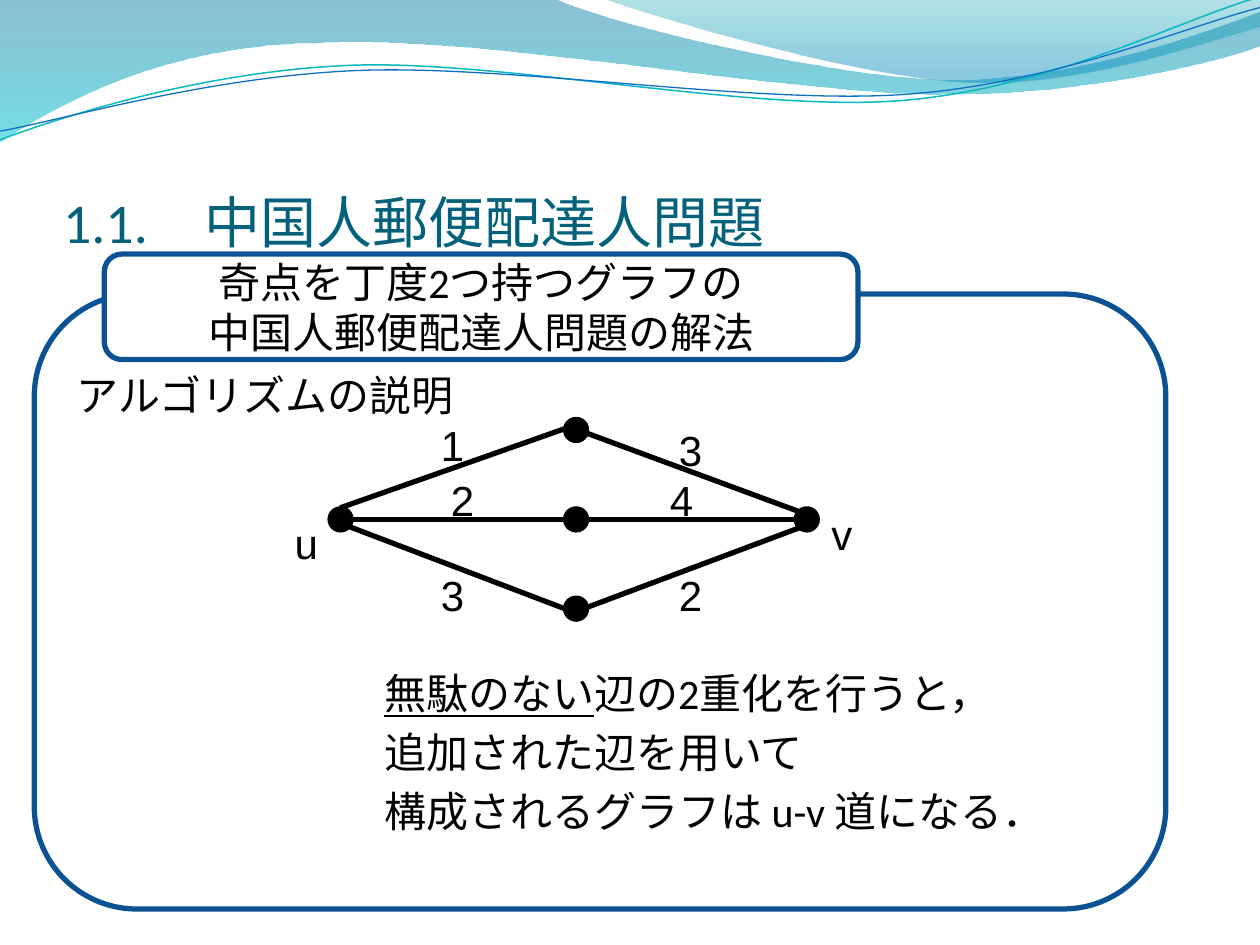
from pptx import Presentation
from pptx.dml.color import RGBColor
from pptx.enum import shapes, text
from pptx.oxml import ns
from pptx.util import Pt
from lxml import etree

BLACK = RGBColor(0x00, 0x00, 0x00)
WHITE = RGBColor(0xFF, 0xFF, 0xFF)
TITLE_TEAL = RGBColor(0x04, 0x61, 0x7B)
FRAME_BLUE = RGBColor(0x0B, 0x52, 0x92)
WAVE_BLUE = RGBColor(0x00, 0x74, 0xA1)
WAVE_CYAN = RGBColor(0x00, 0xC6, 0xCF)
CREST_TEAL = RGBColor(0x00, 0xA1, 0xA9)
CREST_BLUE = RGBColor(0x00, 0x8B, 0xBF)
LINE_CYAN = RGBColor(0x0A, 0xB8, 0xBF)
LINE_BLUE = RGBColor(0x0F, 0x6F, 0xC6)

WAVE = [(0, -0.7), (317, -0.7), (342.7, 12.2, 478, 45.4, 545.8, 45.4),
        (614.2, 45.4, 689.8, 18.7, 720, 6.5), (720.7, 25.9),
        (707.8, 31.7, 626.4, 54.7, 537.1, 54),
        (447.8, 54, 275, 20.2, 185, 24.5),
        (92.9, 25.2, 33.1, 59.8, -0.7, 81.4)]
CREST = [(344.9, -0.7), (366.5, 7.9, 491, 44.6, 553.7, 46.8),
         (616.3, 49.7, 691.9, 23, 720, 15.1), (720, 0)]
CYAN_CURVE = [(0, 79.9), (34.6, 67, 113.8, 41, 199.4, 37.4),
              (284.4, 33.8, 427, 64.1, 513.4, 57.6),
              (599.8, 51.1, 675.4, 10.8, 718.6, -1.4)]
BLUE_CURVE = [(0, 74.9), (33.8, 69.1, 118.1, 43.9, 203.8, 40.3),
              (290.2, 36.7, 429.8, 59.8, 516.2, 54),
              (601.9, 48.2, 677.5, 15.1, 720, 4.3)]

NODE_SIZE = 13
NODES = [(169.2, 10.7), (34.6, 61.8), (169.2, 61.8), (169.2, 112.8), (301, 61.8)]
EDGES = [(169.8, 10.5, 296.5, 57.3), (173.4, 6.2, 34.4, 55.2),
         (35.8, 64.5, 162.6, 112.8), (35.8, 61.8, 294.3, 61.8),
         (169.8, 114.2, 296.5, 66.7)]
LABELS = [("1", 84.8, 1.2), ("3", 220.9, 4), ("2", 90.6, 32.8),
          ("4", 215.8, 32.8), ("3", 84.8, 86.8), ("2", 220.9, 86.8),
          ("u", 1.3, 57.3), ("v", 308, 52.3)]


def format_text(frame, font="Calibri", size=24, color=BLACK, align=text.PP_ALIGN.LEFT):
    for para in frame.paragraphs:
        para.alignment = align
        for span in para.runs:
            span.font.name = font
            span.font.size = Pt(size)
            span.font.color.rgb = color


def add_text(page, box, words, font="Calibri", wrap=True):
    frame = page.shapes.add_textbox(*map(Pt, box)).text_frame
    frame.word_wrap = wrap
    frame.text = words
    format_text(frame, font)
    return frame


def add_outline(page, origin, segments, closed):
    left, top = origin
    points = [(Pt(left + x), Pt(top + y)) for segment in segments
              for x, y in zip(segment[::2], segment[1::2])]
    builder = page.shapes.build_freeform(*points[0])
    builder.add_line_segments(points[1:], close=closed)
    shape = builder.convert_to_shape()
    shape.shadow.inherit = False
    steps = iter(list(shape.element.spPr.iter(ns.qn("a:lnTo"))))
    for segment in segments[1:]:
        step = next(steps)
        if len(segment) == 6:
            step_parent = step.getparent()
            curve = etree.Element(ns.qn("a:cubicBezTo"))
            step_parent.replace(step, curve)
            curve.append(step[0])
            for control in (next(steps), next(steps)):
                curve.append(control[0])
                step_parent.remove(control)
    return shape


def add_waves(page, origin):
    fills = [(WAVE, (WAVE_BLUE, 0, 45), (WAVE_CYAN, 1, 55)),
             (CREST, (CREST_TEAL, 0, 30), (CREST_BLUE, 0.8, 45))]
    for segments, *stops in fills:
        wave = add_outline(page, origin, segments, True)
        wave.line.fill.background()
        wave.fill.gradient()
        wave.fill.gradient_angle = 270
        for stop, (color, position, opacity) in zip(wave.fill.gradient_stops, stops):
            stop.color.rgb = color
            stop.position = position
        colors = wave.element.spPr.iter(ns.qn("a:srgbClr"))
        for node, (color, position, opacity) in zip(list(colors), stops):
            etree.SubElement(node, ns.qn("a:alpha"), val=str(opacity * 1000))
    for segments, color, width in [(CYAN_CURVE, LINE_CYAN, 0.85),
                                   (BLUE_CURVE, LINE_BLUE, 0.75)]:
        curve = add_outline(page, origin, segments, False)
        curve.fill.background()
        curve.line.color.rgb = color
        curve.line.width = Pt(width)


def place_title(page, box):
    title = page.shapes.title
    title.left, title.top, title.width, title.height = map(Pt, box)
    frame = title.text_frame
    frame.text = "1.1.　中国人郵便配達人問題"
    frame.auto_size = text.MSO_AUTO_SIZE.NONE
    frame.vertical_anchor = text.MSO_ANCHOR.BOTTOM
    frame.margin_left = frame.margin_right = frame.margin_bottom = 0
    format_text(frame, size=32, color=TITLE_TEAL)


def add_panel(page, box):
    panel = page.shapes.add_shape(shapes.MSO_SHAPE.ROUNDED_RECTANGLE, *map(Pt, box))
    panel.shadow.inherit = False
    panel.fill.background()
    panel.line.color.rgb = FRAME_BLUE
    panel.line.width = Pt(3)
    return panel


def add_heading(page, box):
    heading = add_panel(page, box)
    heading.fill.solid()
    heading.fill.fore_color.rgb = WHITE
    frame = heading.text_frame
    frame.text = "奇点を丁度2つ持つグラフの\n中国人郵便配達人問題の解法"
    frame.vertical_anchor = text.MSO_ANCHOR.MIDDLE
    format_text(frame, align=text.PP_ALIGN.CENTER)


def add_graph(page, origin):
    left, top = origin
    for x1, y1, x2, y2 in EDGES:
        edge = page.shapes.add_connector(
            shapes.MSO_CONNECTOR.STRAIGHT,
            Pt(left + x1), Pt(top + y1), Pt(left + x2), Pt(top + y2))
        edge.line.color.rgb = BLACK
        edge.line.width = Pt(3)
        etree.SubElement(edge.element.spPr, ns.qn("a:effectLst"))
    for x, y in NODES:
        node = page.shapes.add_shape(
            shapes.MSO_SHAPE.OVAL, Pt(left + x - NODE_SIZE / 2),
            Pt(top + y - NODE_SIZE / 2), Pt(NODE_SIZE), Pt(NODE_SIZE))
        node.shadow.inherit = False
        node.fill.solid()
        node.fill.fore_color.rgb = BLACK
        node.line.color.rgb = BLACK
        node.line.width = Pt(2)
    for label, x, y in LABELS:
        add_text(page, (left + x, top + y, 28, 36.7), label, "Arial", False)


def add_conclusion(page, box):
    frame = add_text(page, box, "無駄のない\n追加された辺を用いて\n構成されるグラフは u-v 道になる．")
    frame.margin_left, frame.margin_top = Pt(199.3), Pt(205)
    first = frame.paragraphs[0]
    first.add_run().text = "辺の2重化を行うと，"
    format_text(frame)
    first.runs[0].font.underline = True
    for para in frame.paragraphs[1:]:
        para.space_before = Pt(5)


def main():
    deck = Presentation()
    deck.slide_width, deck.slide_height = Pt(720), Pt(540)
    page = deck.slides.add_slide(deck.slide_layouts[5])
    add_waves(page, (0, 0))
    place_title(page, (36, 55.4, 648, 90))
    add_panel(page, (19.6, 168, 646.6, 351.4))
    add_heading(page, (59.6, 145.2, 430.6, 60.3))
    add_graph(page, (160, 235))
    add_conclusion(page, (20.2, 176.4, 707, 345.6))
    add_text(page, (36.7, 207.4, 635, 36.7), "アルゴリズムの説明")
    deck.save("out.pptx")


if __name__ == "__main__":
    main()
